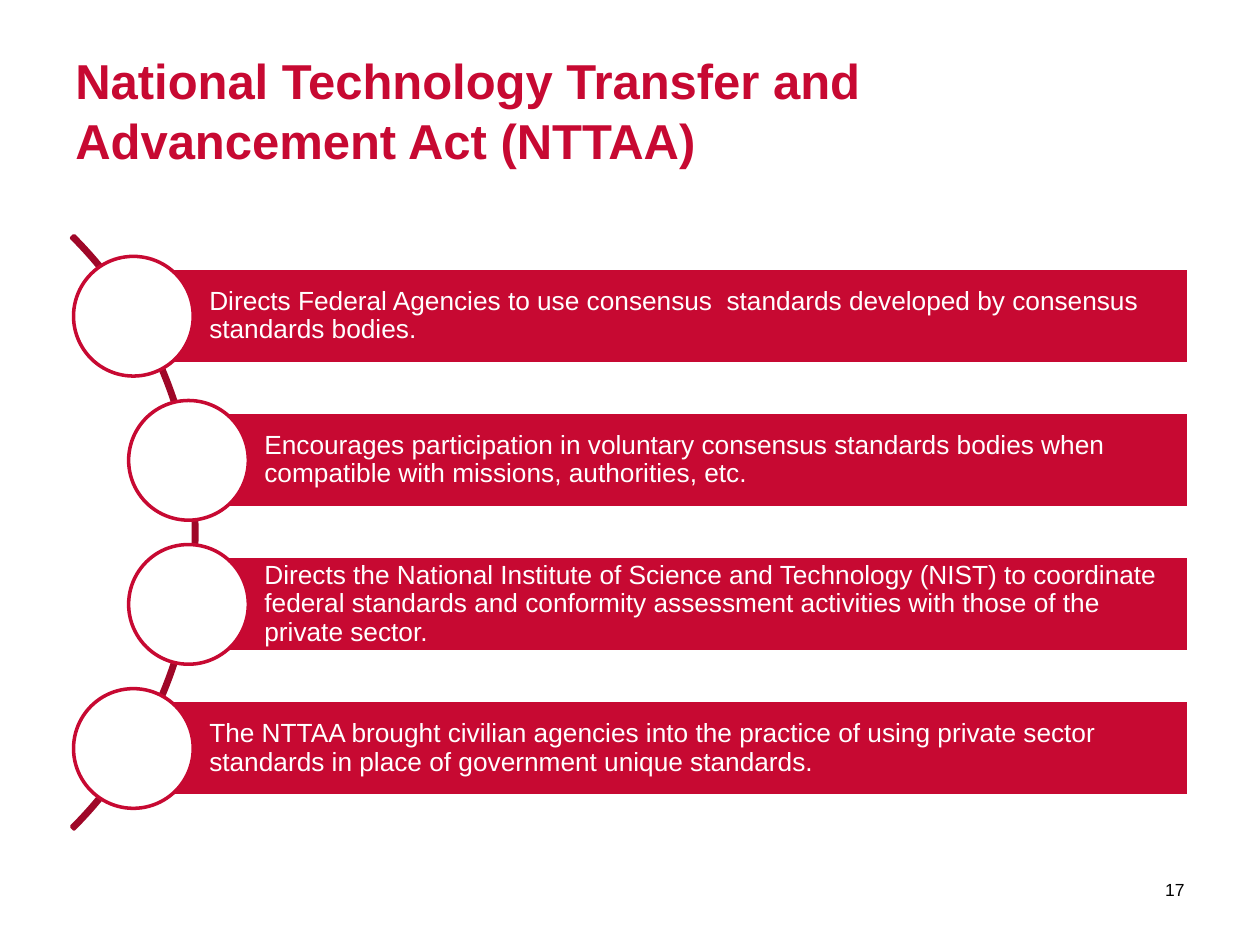
from pptx import Presentation
from pptx.dml.color import RGBColor
from pptx.enum.shapes import MSO_SHAPE as Shape
from pptx.enum.text import MSO_ANCHOR as Anchor, PP_ALIGN as Align
from pptx.util import Pt

RED = RGBColor(0xC7, 0x09, 0x32)
DARK = RGBColor(0x9F, 0x07, 0x28)
WHITE = RGBColor(0xFF, 0xFF, 0xFF)
BLACK = RGBColor(0, 0, 0)

# Indent level and wording of each point
POINTS = [
    (0, "Directs Federal Agencies to use consensus  standards developed by "
        "consensus standards bodies."),
    (1, "Encourages participation in voluntary consensus standards bodies "
        "when compatible with missions, authorities, etc."),
    (1, "Directs the National Institute of Science and Technology (NIST) to "
        "coordinate federal standards and conformity assessment activities "
        "with those of the private sector."),
    (0, "The NTTAA brought civilian agencies into the practice of using "
        "private sector standards in place of government unique standards."),
]


def add_shape(slide, kind, x, y, w, h, fill, line):
    shape = slide.shapes.add_shape(kind, Pt(x), Pt(y), Pt(w), Pt(h))
    shape.shadow.inherit = False
    if fill is None:
        shape.fill.background()
    else:
        shape.fill.solid()
        shape.fill.fore_color.rgb = fill
    shape.line.color.rgb = line
    shape.line.width = Pt(2)
    return shape


def set_text(shape, text, size, color, bold=False, align=Align.LEFT,
             anchor=Anchor.MIDDLE, pad=(7.2, 3.6, 7.2, 3.6)):
    frame = shape.text_frame
    frame.word_wrap = True
    frame.vertical_anchor = anchor
    (frame.margin_left, frame.margin_top,
     frame.margin_right, frame.margin_bottom) = map(Pt, pad)
    frame.text = text
    para = frame.paragraphs[0]
    para.alignment = align
    font = para.runs[0].font
    font.name, font.size, font.bold = "Arial", Pt(size), bold
    font.color.rgb = color
    return para


def add_title(slide, x, y, w, h):
    box = slide.shapes.add_textbox(Pt(x), Pt(y), Pt(w), Pt(h))
    para = set_text(box, "National Technology Transfer and Advancement Act (NTTAA)",
                    28, RED, bold=True, anchor=Anchor.TOP, pad=(7.2, 6, 7.2, 3.6))
    para.line_spacing = 1.03


def add_list(slide, x, y, w, h):
    # Curve behind the circles, a quarter of a ring
    ring = 479.5
    arc = add_shape(slide, Shape.BLOCK_ARC, x + 70.5 - ring, y + (h - ring) / 2,
                    ring, ring, None, DARK)
    for i, value in enumerate((189, 27, 0.004)):
        arc.adjustments[i] = value

    # Bars, each with a circle centred on its left edge
    disc, bar = 68.4, 54.7
    step = (h - disc) / (len(POINTS) - 1)
    for i, (level, text) in enumerate(POINTS):
        left = disc / 2 + level * 31.5
        mid = y + disc / 2 + i * step
        strip = add_shape(slide, Shape.RECTANGLE, x + left, mid - bar / 2,
                          w - left, bar, RED, WHITE)
        para = set_text(strip, text, 15, WHITE, pad=(43.4, 2.9, 2.9, 2.9))
        para.line_spacing = 0.9
        add_shape(slide, Shape.OVAL, x + left - disc / 2, mid - disc / 2,
                  disc, disc, WHITE, RED)


def add_number(slide, x, y, w, h):
    box = slide.shapes.add_textbox(Pt(x), Pt(y), Pt(w), Pt(h))
    set_text(box, "17", 10, BLACK, align=Align.RIGHT)


def main():
    deck = Presentation()
    deck.slide_width, deck.slide_height = Pt(720), Pt(540)
    slide = deck.slides.add_slide(deck.slide_layouts[6])
    add_title(slide, 36, 21.6, 648, 90)
    add_list(slide, 42, 146.5, 637.2, 315.4)
    add_number(slide, 633.6, 494, 50.4, 28.8)
    deck.save("out.pptx")


if __name__ == "__main__":
    main()
